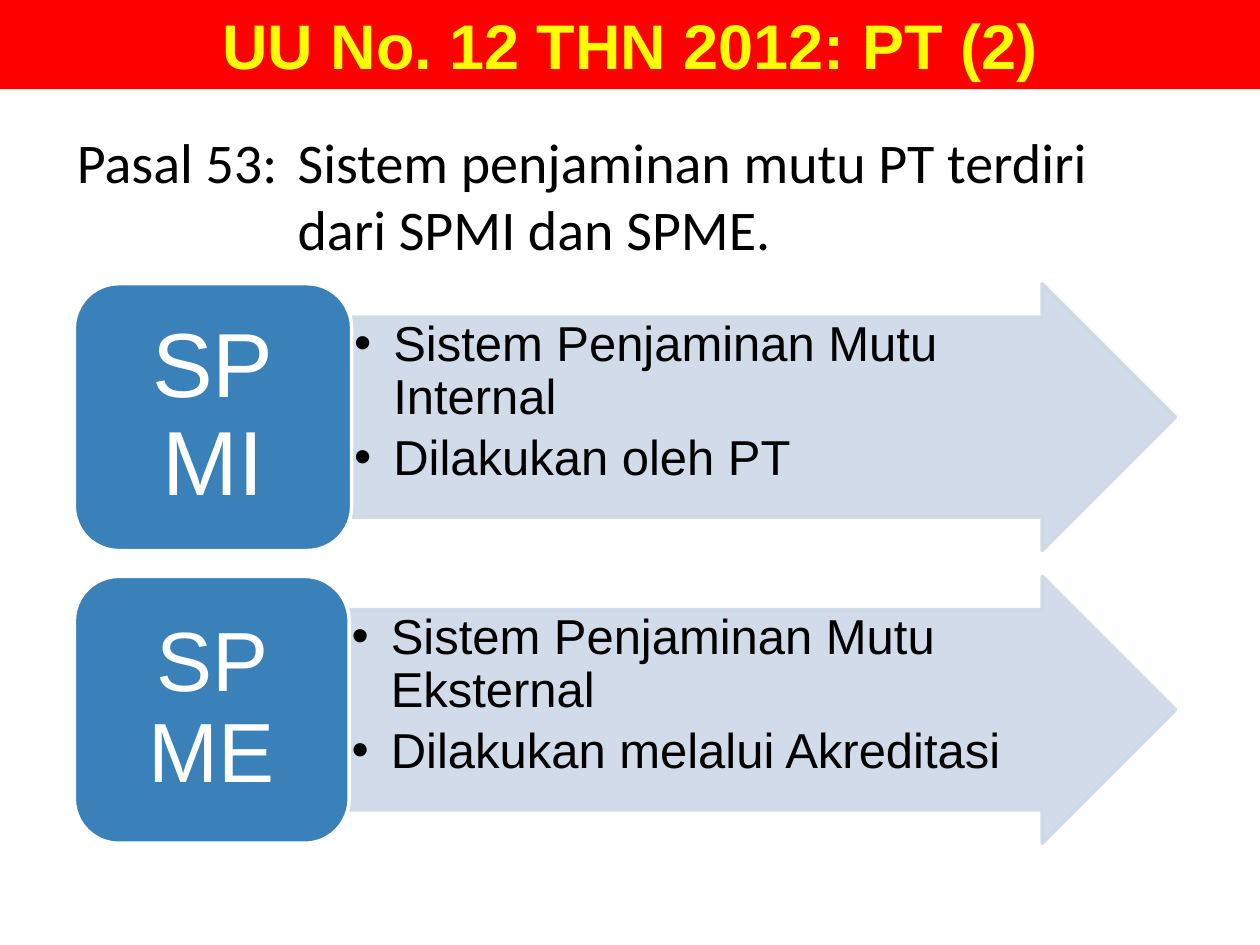
from pptx import Presentation
from pptx.dml.color import RGBColor
from pptx.enum.shapes import MSO_SHAPE
from pptx.enum.text import MSO_ANCHOR, MSO_AUTO_SIZE, PP_ALIGN
from pptx.oxml.ns import qn
from pptx.util import Cm, Pt
from lxml.etree import SubElement

TITLE = "UU No. 12 THN 2012: PT (2)"
ARTICLE = "Pasal 53: \tSistem penjaminan mutu PT terdiri dari SPMI dan SPME."
SYSTEMS = [
    {"name": "SPMI", "size": 52, "width": 5.59, "inset": 0.58,
     "points": ["Sistem Penjaminan Mutu Internal", "Dilakukan oleh PT"]},
    {"name": "SP ME", "size": 48, "width": 5.54, "inset": 0.52,
     "points": ["Sistem Penjaminan Mutu Eksternal", "Dilakukan melalui Akreditasi"]},
]
LEFT, RIGHT, TOP = 1.5, 23.7, 5.72
ROW_HEIGHT, ROW_STEP = 5.38, 5.9
BLUE, PALE, WHITE, BLACK, RED, YELLOW = (
    "3A81BA", "CED8E7", "FFFFFF", "000000", "FF0000", "FFFF00")


def color(value):
    return RGBColor.from_string(value)


def assign(target, values):
    for name, value in values.items():
        setattr(target, name, value)


def set_frame(box, anchor, left=0.25, top=0.13, right=0.25, bottom=0.13):
    assign(box.text_frame, {
        "word_wrap": True, "auto_size": MSO_AUTO_SIZE.NONE, "vertical_anchor": anchor,
        "margin_left": Cm(left), "margin_top": Cm(top),
        "margin_right": Cm(right), "margin_bottom": Cm(bottom)})


def write(para, text, size, ink, align=PP_ALIGN.LEFT, font="Arial", bold=False, spacing=1.0):
    span = para.add_run()
    span.text = text
    assign(span.font, {"name": font, "size": Pt(size), "bold": bold})
    span.font.color.rgb = color(ink)
    assign(para, {"alignment": align, "line_spacing": spacing})


def hang(para, indent, bullet=None):
    properties = para._p.get_or_add_pPr()
    properties.set("marL", str(Cm(indent)))
    properties.set("indent", str(-Cm(indent)))
    if bullet:
        SubElement(properties, qn("a:buFont")).set("typeface", "Arial")
        SubElement(properties, qn("a:buChar")).set("char", bullet)


def add_block(page, kind, left, top, width, fill, line, opacity=None):
    shape = page.shapes.add_shape(kind, Cm(left), Cm(top), Cm(width), Cm(ROW_HEIGHT))
    shape.shadow.inherit = False
    shape.fill.solid()
    shape.fill.fore_color.rgb = color(fill)
    shape.line.color.rgb = color(line)
    shape.line.width = Pt(2)
    if opacity:
        for node in shape._element.spPr.iter(qn("a:srgbClr")):
            SubElement(node, qn("a:alpha")).set("val", str(opacity * 1000))
    return shape


def add_system(page, system, top):
    start = LEFT + system["width"]
    arrow = add_block(page, MSO_SHAPE.RIGHT_ARROW, start, top, RIGHT - start, PALE, PALE, 90)
    arrow.adjustments[0], arrow.adjustments[1] = 0.75, 0.5
    set_frame(arrow, MSO_ANCHOR.TOP, 0.05, 0.05, 1.37, 0.05)
    for index, point in enumerate(system["points"]):
        frame = arrow.text_frame
        para = frame.add_paragraph() if index else frame.paragraphs[0]
        hang(para, 0.79, "•")
        write(para, point, 28, BLACK, spacing=0.9)
        para.space_after = Pt(4.5)

    label = add_block(page, MSO_SHAPE.ROUNDED_RECTANGLE, LEFT, top, system["width"], BLUE, WHITE)
    inset = system["inset"]
    set_frame(label, MSO_ANCHOR.MIDDLE, inset, inset / 2, inset, inset / 2)
    write(label.text_frame.paragraphs[0], system["name"], system["size"], WHITE,
          PP_ALIGN.CENTER, spacing=0.9)


def main():
    deck = Presentation()
    assign(deck, {"slide_width": Cm(25.4), "slide_height": Cm(19.05)})
    page = deck.slides.add_slide(deck.slide_layouts[5])

    title = page.shapes.title
    assign(title, {"left": 0, "top": 0, "width": deck.slide_width, "height": Cm(1.8)})
    title.fill.solid()
    title.fill.fore_color.rgb = color(RED)
    set_frame(title, MSO_ANCHOR.MIDDLE)
    write(title.text_frame.paragraphs[0], TITLE, 36, YELLOW, PP_ALIGN.CENTER, bold=True)

    article = page.shapes.add_textbox(Cm(1.3), Cm(2.44), Cm(22.6), Cm(3))
    set_frame(article, MSO_ANCHOR.TOP)
    para = article.text_frame.paragraphs[0]
    hang(para, 4.45)
    write(para, ARTICLE, 32, BLACK, font="Calibri")

    for row, system in enumerate(SYSTEMS):
        add_system(page, system, TOP + row * ROW_STEP)
    deck.save("out.pptx")


if __name__ == "__main__":
    main()
